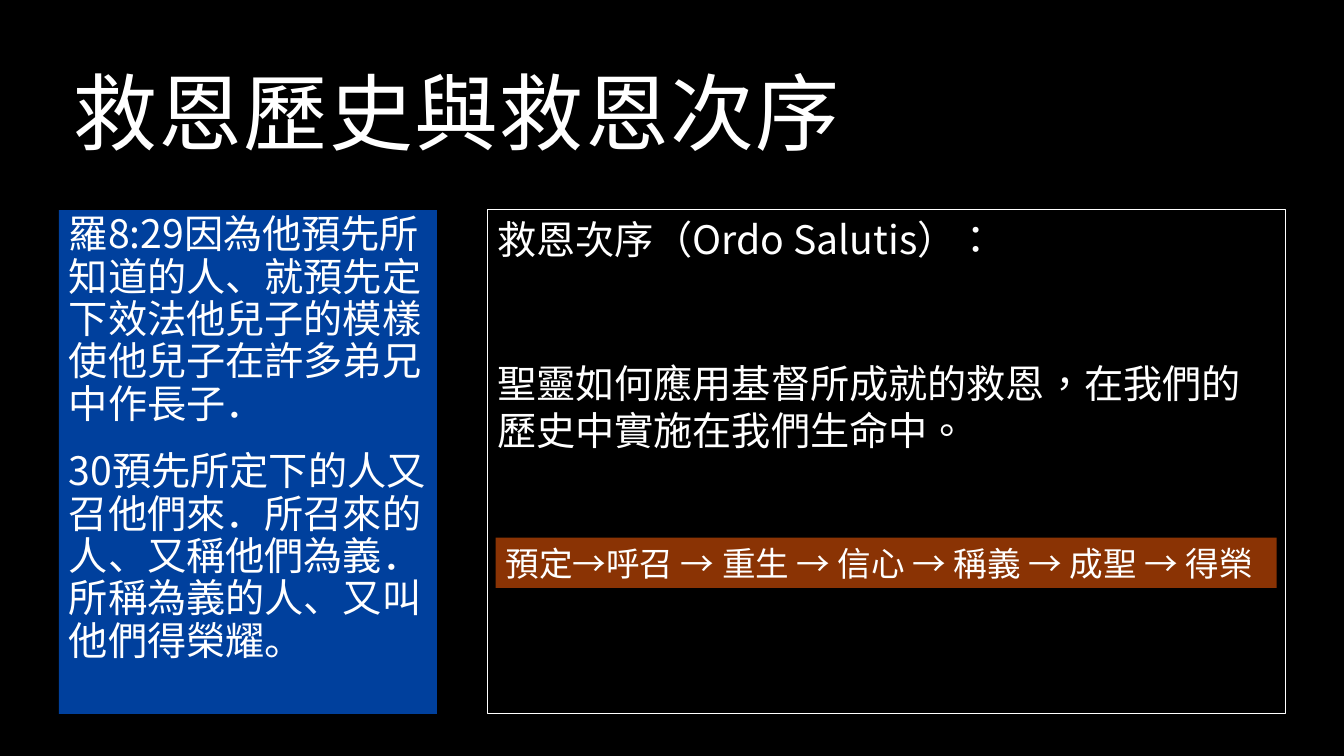
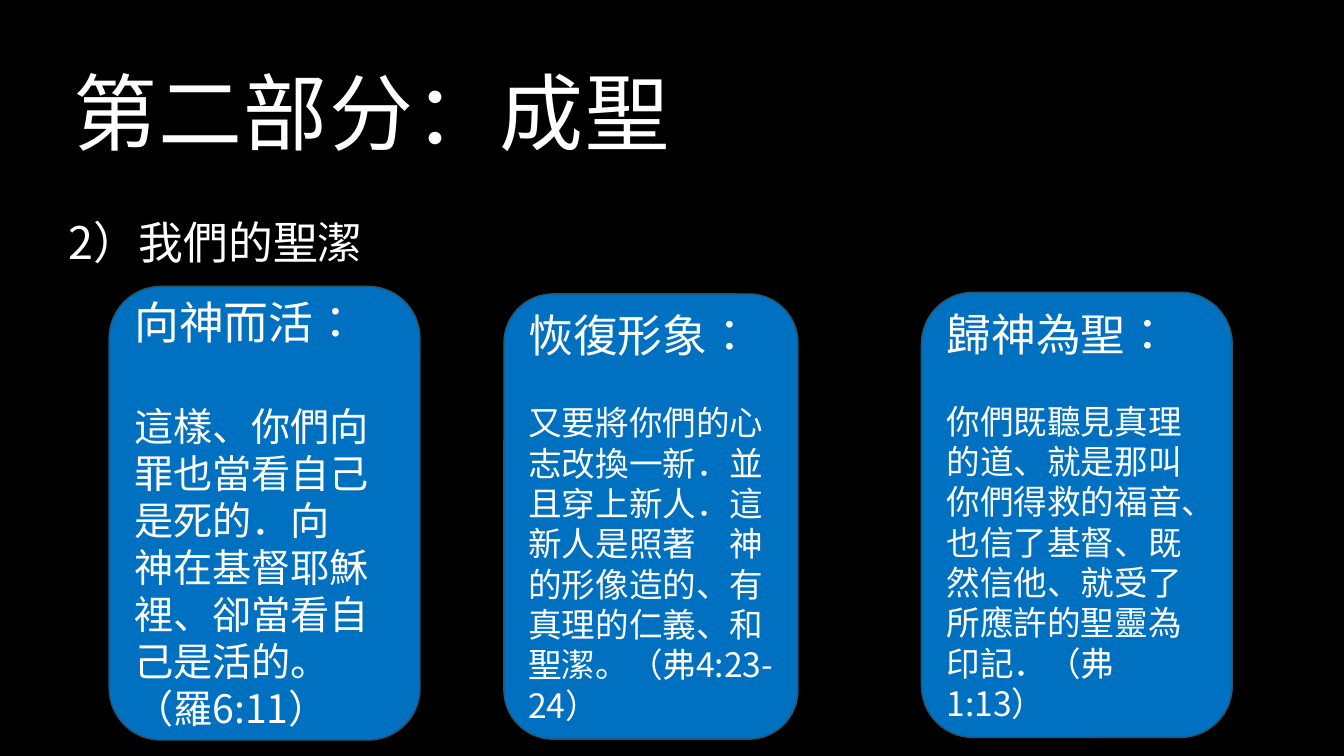
from dataclasses import dataclass
from typing import NamedTuple, Optional

from lxml import etree
from pptx import Presentation
from pptx import util as u
from pptx.dml.color import RGBColor
from pptx.enum import shapes, text
from pptx.oxml import ns


@dataclass(frozen=True)
class Theme:
    background: str = "000000"
    ink: str = "FFFFFF"
    scripture: str = "00409D"
    chain: str = "8A3304"
    card: str = "0070C0"
    card_edge: str = "265670"
    title_font: str = "Arial"
    body_font: str = "Noto Sans CJK SC"
    title_size: int = 60
    heading_size: int = 32
    body_size: int = 28
    small_size: int = 24


class Area(NamedTuple):
    """A place on the slide, in cells of a 160 by 90 grid."""
    column: float
    row: float
    columns: float
    rows: float


class Line(NamedTuple):
    """One paragraph and its type."""
    wording: str
    size: int
    before: float = 0
    spacing: float = 1.0
    language: str = "zh-CN"


class Card(NamedTuple):
    area: Area
    heading: str
    verse: str
    size: int


THEME = Theme()
CELL = u.Inches(1) // 12
WIDE, HIGH = 160, 90
TITLE_AREA = Area(7.5, 2, 142.5, 18)
TOP, DEPTH = 25, 60
LEFT = 7
TAIWAN = "zh-TW"
LINE_HEIGHT = 1.2

VERSES = [
    "羅8:29因為他預先所知道的人、就預先定下效法他兒子的模樣使他兒子在許多弟兄中作長子．",
    "30預先所定下的人又召他們來．所召來的人、又稱他們為義．所稱為義的人、又叫他們得榮耀。",
]
STEPS = "預定→呼召 → 重生 → 信心 → 稱義 → 成聖 → 得榮"
CARDS = [
    Card(Area(13, 34.1, 37, 54), "向神而活：",
         "這樣、你們向罪也當看自己是死的．向　神在基督耶穌裡、卻當看自己是活的。（羅6:11）",
         THEME.body_size),
    Card(Area(60, 35, 35, 53), "恢復形象：",
         "又要將你們的心志改換一新．並且穿上新人．這新人是照著　神的形像造的、有真理的仁義、和聖潔。（弗4:23-24）",
         THEME.small_size),
    Card(Area(109.7, 34.8, 37, 53), "歸神為聖：",
         "你們既聽見真理的道、就是那叫你們得救的福音、也信了基督、既然信他、就受了所應許的聖靈為印記．（弗1:13）",
         THEME.small_size),
]


def place(shape, area: Area) -> None:
    shape.left, shape.top, shape.width, shape.height = (round(n * CELL) for n in area)


def paint(shape, fill: Optional[str], edge: Optional[str] = None, weight: float = 1) -> None:
    if fill:
        shape.fill.solid()
        shape.fill.fore_color.rgb = RGBColor.from_string(fill)
    else:
        shape.fill.background()
    if edge:
        shape.line.color.rgb = RGBColor.from_string(edge)
        shape.line.width = u.Pt(weight)
    else:
        shape.line.fill.background()


def style_span(span, font: str, size: int, language: str, tracking: int = 0) -> None:
    span.font.size = u.Pt(size)
    span.font.bold = False
    span.font.color.rgb = RGBColor.from_string(THEME.ink)
    span.font.name = font
    properties = span._r.get_or_add_rPr()
    properties.set("lang", language)
    if tracking:
        properties.set("spc", str(tracking))
    etree.SubElement(properties, ns.qn("a:ea")).set("typeface", THEME.body_font)


def write(shape, lines: list[Line], anchor=text.MSO_ANCHOR.TOP,
          font: str = THEME.body_font, tracking: int = 0) -> None:
    frame = shape.text_frame
    frame.word_wrap = True
    frame.auto_size = text.MSO_AUTO_SIZE.NONE
    frame.vertical_anchor = anchor
    frame.text = "\n".join(line.wording for line in lines)
    for para, line in zip(frame.paragraphs, lines):
        properties = para._p.get_or_add_pPr()
        properties.set("marL", "0")
        properties.set("indent", "0")
        etree.SubElement(properties, ns.qn("a:buNone"))
        para.alignment = text.PP_ALIGN.LEFT
        para.line_spacing = line.spacing
        para.space_before = u.Pt(line.before)
        for span in para.runs:
            style_span(span, font, line.size, line.language, tracking)


def add_panel(page, area: Area, fill: Optional[str], edge: Optional[str] = None,
              weight: float = 1, kind=shapes.MSO_SHAPE.RECTANGLE):
    panel = page.shapes.add_shape(kind, 0, 0, 0, 0)
    place(panel, area)
    panel.shadow.inherit = False
    paint(panel, fill, edge, weight)
    return panel


def add_page(deck, title: str, body_area: Area, body_lines: list[Line]):
    page = deck.slides.add_slide(deck.slide_layouts[1])
    place(page.shapes.title, TITLE_AREA)
    write(page.shapes.title, [Line(title, THEME.title_size, spacing=0.9)],
          text.MSO_ANCHOR.BOTTOM, THEME.title_font, tracking=100)
    body = page.placeholders[1]
    place(body, body_area)
    write(body, body_lines)
    return page


def add_order_page(deck) -> None:
    size = THEME.body_size
    page = add_page(deck, "救恩歷史與救恩次序", Area(LEFT, TOP, 45, DEPTH),
                    [Line(verse, size, 18 if index else 0, 0.9)
                     for index, verse in enumerate(VERSES)])
    paint(page.placeholders[1], THEME.scripture)

    # Definition, with the chain of steps laid over its frame
    definition = add_panel(page, Area(58, TOP, 95, DEPTH), None, THEME.ink, 0.75)
    write(definition, [
        Line("救恩次序（Ordo Salutis）：", size, language=TAIWAN),
        Line("聖靈如何應用基督所成就的救恩，在我們的歷史中實施在我們生命中。",
             size, 2 * 18 + size * LINE_HEIGHT, language=TAIWAN),
    ])
    chain = add_panel(page, Area(59, 64, 93, 6), THEME.chain)
    write(chain, [Line(STEPS, THEME.small_size, language=TAIWAN)])


def add_holiness_page(deck) -> None:
    page = add_page(deck, "第二部分：成聖", Area(LEFT, TOP, 145, DEPTH),
                    [Line("2）我們的聖潔", THEME.heading_size)])

    # Three verse cards
    for card in CARDS:
        panel = add_panel(page, card.area, THEME.card, THEME.card_edge,
                          kind=shapes.MSO_SHAPE.ROUNDED_RECTANGLE)
        gap_size = THEME.heading_size if card.size == THEME.body_size else card.size
        write(panel, [
            Line(card.heading, THEME.heading_size, language=TAIWAN),
            Line(card.verse, card.size, gap_size * LINE_HEIGHT),
        ], text.MSO_ANCHOR.MIDDLE)


def main() -> None:
    deck = Presentation()
    deck.slide_width, deck.slide_height = WIDE * CELL, HIGH * CELL
    backdrop = deck.slide_master.background.fill
    backdrop.solid()
    backdrop.fore_color.rgb = RGBColor.from_string(THEME.background)
    add_order_page(deck)
    add_holiness_page(deck)
    deck.save("out.pptx")


if __name__ == "__main__":
    main()
